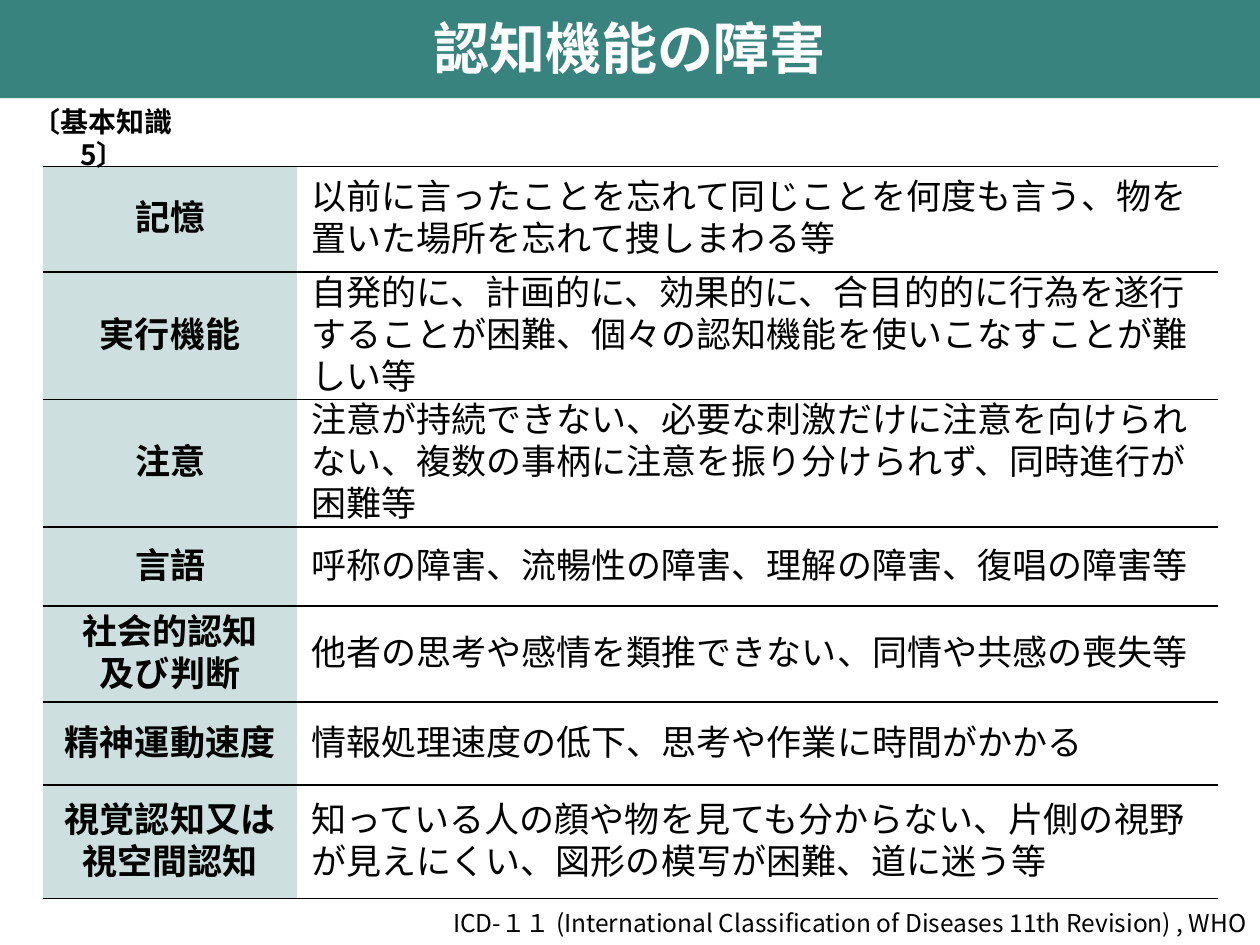
from dataclasses import dataclass

from lxml.etree import SubElement as Sub
from pptx import Presentation
from pptx.dml.color import RGBColor as Rgb
from pptx.enum.shapes import MSO_SHAPE as Shape
from pptx.enum.text import MSO_ANCHOR as Anchor, MSO_AUTO_SIZE as Fit, PP_ALIGN as Align
from pptx.oxml import parse_xml
from pptx.oxml.ns import nsdecls, qn
from pptx.util import Inches, Pt


@dataclass(frozen=True)
class Theme:
    font: str = "Noto Sans CJK JP"
    teal: str = "39837F"
    ink: str = "000000"
    white: str = "FFFFFF"
    tint: int = 25
    head: int = 32
    body: int = 20
    tag: int = 16
    note: int = 14


THEME = Theme()

ROWS = [
    (0.84, "記憶", "以前に言ったことを忘れて同じことを何度も言う、物を置いた場所を忘れて捜しまわる等"),
    (0.91, "実行機能", "自発的に、計画的に、効果的に、合目的的に行為を遂行することが困難、"
     "個々の認知機能を使いこなすことが難しい等"),
    (0.90, "注意", "注意が持続できない、必要な刺激だけに注意を向けられない、"
     "複数の事柄に注意を振り分けられず、同時進行が困難等"),
    (0.63, "言語", "呼称の障害、流暢性の障害、理解の障害、復唱の障害等"),
    (0.76, "社会的認知\n及び判断", "他者の思考や感情を類推できない、同情や共感の喪失等"),
    (0.66, "精神運動速度", "情報処理速度の低下、思考や作業に時間がかかる"),
    (0.90, "視覚認知又は\n視空間認知", "知っている人の顔や物を見ても分からない、片側の視野が見えにくい、"
     "図形の模写が困難、道に迷う等"),
]


def write(frame, text, size, color=THEME.ink, bold=False, align=Align.LEFT,
          lead=None, indent=0):
    """Fill a text frame, one paragraph per line of text."""
    frame.word_wrap = True
    for i, line in enumerate(text.split("\n")):
        para = frame.add_paragraph() if i else frame.paragraphs[0]
        para.alignment = align
        if lead:
            para.line_spacing = Pt(lead)
        if indent:
            props = para._p.get_or_add_pPr()
            props.set("marL", str(Inches(indent)))
            props.set("indent", "0")
        run = para.add_run()
        run.text = line
        font = run.font
        font.size, font.bold, font.name = Pt(size), bold, THEME.font
        font.color.rgb = Rgb.from_string(color)
        Sub(run._r.get_or_add_rPr(), qn("a:ea"), typeface=THEME.font)


def paint(obj, color):
    obj.fill.solid()
    obj.fill.fore_color.rgb = Rgb.from_string(color)


class Page:
    def __init__(self, deck, theme):
        self.theme = theme
        self.slide = deck.slides.add_slide(deck.slide_layouts[5])
        self.shapes = self.slide.shapes

    def band(self, *box):
        bar = self.shapes.add_shape(Shape.RECTANGLE, *map(Inches, box))
        bar.shadow.inherit = False
        paint(bar, self.theme.teal)
        bar.line.fill.background()

    def title(self, text, *box):
        head = self.shapes.title
        head.left, head.top, head.width, head.height = map(Inches, box)
        frame = head.text_frame
        frame.auto_size = Fit.NONE
        frame.vertical_anchor = Anchor.MIDDLE
        write(frame, text, self.theme.head, color=self.theme.white, bold=True,
              align=Align.CENTER, lead=40)
        # Bring the title in front of the band
        self.shapes._spTree.append(head._element)

    def label(self, text, size, *box, **style):
        frame = self.shapes.add_textbox(*map(Inches, box)).text_frame
        frame.auto_size = Fit.SHAPE_TO_FIT_TEXT
        write(frame, text, size, **style)

    def rule(self, cell):
        """Black lines above and below a cell, none at its sides."""
        props = cell._tc.get_or_add_tcPr()
        line = f'<a:solidFill><a:srgbClr val="{self.theme.ink}"/></a:solidFill>'
        for i, side in enumerate("LRTB"):
            fill = line if side in "TB" else "<a:noFill/>"
            props.insert(i, parse_xml(
                f'<a:ln{side} {nsdecls("a")} w="{Pt(1)}">{fill}</a:ln{side}>'))

    def cell(self, cell, text, **style):
        cell.margin_left = cell.margin_right = cell.margin_top = Inches(0.01)
        cell.margin_bottom = 0
        cell.vertical_anchor = Anchor.MIDDLE
        write(cell.text_frame, text, self.theme.body, lead=24, **style)

    def table(self, rows, cols, left, top):
        high = sum(row[0] for row in rows)
        grid = self.shapes.add_table(
            len(rows), len(cols),
            *map(Inches, (left, top, sum(cols), high))).table
        grid.first_row = grid.horz_banding = False
        for col, wide in zip(grid.columns, cols):
            col.width = Inches(wide)
        for row, (tall, name, text) in zip(grid.rows, rows):
            row.height = Inches(tall)
            key, desc = row.cells
            self.cell(key, name, bold=True, align=Align.CENTER)
            self.cell(desc, text, indent=0.1)
            paint(key, self.theme.teal)
            paint(desc, self.theme.white)
            tone = key._tc.tcPr.find(".//" + qn("a:srgbClr"))
            Sub(tone, qn("a:alpha"), val=str(self.theme.tint * 1000))
            for item in (key, desc):
                self.rule(item)


def main():
    deck = Presentation()
    deck.slide_width, deck.slide_height = Inches(10), Inches(7.5)
    page = Page(deck, THEME)

    # Table of impaired functions
    page.table(ROWS, (2.02, 7.31), 0.34, 1.32)

    # Header
    page.band(0, 0, 10, 0.78)
    page.title("認知機能の障害", 2, 0.05, 6, 0.63)

    # Source note and section tag
    page.label("ICD-１１ (International Classification of Diseases 11th Revision) , WHO",
               THEME.note, 1.02, 7.16, 8.98, 0.34, align=Align.RIGHT)
    page.label("〔基本知識5〕", THEME.tag, 0, 0.78, 1.63, 0.37,
               bold=True, align=Align.CENTER)

    deck.save("out.pptx")


if __name__ == "__main__":
    main()
